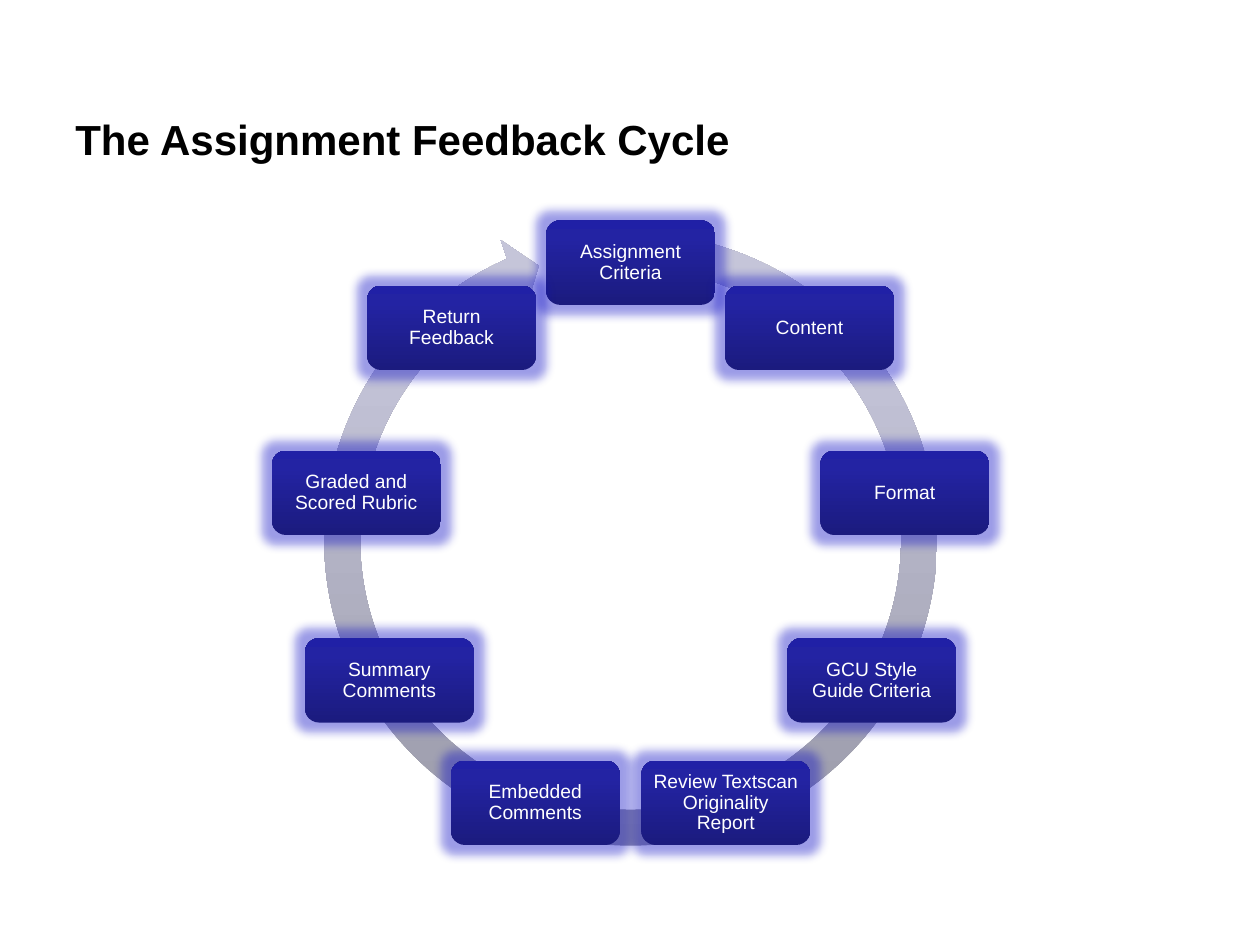
import copy
import math

from lxml import etree
from pptx import Presentation
from pptx.dml.color import RGBColor
from pptx.enum import shapes, text
from pptx.oxml import ns
from pptx.util import Inches, Pt

STEPS = [
    "Assignment Criteria", "Content", "Format", "GCU Style Guide Criteria",
    "Review Textscan Originality Report", "Embedded Comments",
    "Summary Comments", "Graded and Scored Rubric", "Return Feedback",
]
NAVY = ["1B1B7E", "2323A3", "2020A6"]
GREY = ["9898A7", "C5C5D9", "C6C6DA"]
GLOW = "0808C4"


def color(code):
    return RGBColor.from_string(code)


def style(font, size, code, bold=False):
    font.name, font.size, font.bold = "Arial", Pt(size), bold
    font.color.rgb = color(code)


def shade(shape, codes):
    """Fill from bottom to top with three stops, without line or shadow."""
    shape.shadow.inherit = False
    shape.line.fill.background()
    fill = shape.fill
    fill.gradient()
    fill.gradient_angle = 90
    last = shape.element.spPr.findall(".//" + ns.qn("a:gs"))[-1]
    last.addprevious(copy.deepcopy(last))
    for stop, place, code in zip(fill.gradient_stops, (0, 0.8, 1), codes):
        stop.position = place
        stop.color.rgb = color(code)


def add_glow(shape, code, size, alpha):
    effect = shape.element.spPr.find(ns.qn("a:effectLst"))
    glow = etree.SubElement(effect, ns.qn("a:glow"), rad=str(Pt(size)))
    tint = etree.SubElement(glow, ns.qn("a:srgbClr"), val=code)
    etree.SubElement(tint, ns.qn("a:alpha"), val=str(alpha * 1000))


def add_title(slide, words, x, y, w, h):
    box = slide.shapes.add_textbox(Inches(x), Inches(y), Inches(w), Inches(h))
    frame = box.text_frame
    frame.word_wrap = True
    frame.margin_top = Inches(0.4)
    frame.vertical_anchor = text.MSO_ANCHOR.MIDDLE
    frame.text = words
    style(frame.paragraphs[0].runs[0].font, 24, "000000", True)


def add_step(slide, words, x, y, w, h):
    card = slide.shapes.add_shape(
        shapes.MSO_SHAPE.ROUNDED_RECTANGLE,
        Inches(x), Inches(y), Inches(w), Inches(h))
    shade(card, NAVY)
    add_glow(card, GLOW, 11, 40)
    frame = card.text_frame
    frame.word_wrap = True
    frame.margin_left = frame.margin_right = Inches(0.05)
    frame.margin_top = frame.margin_bottom = Inches(0.05)
    frame.vertical_anchor = text.MSO_ANCHOR.MIDDLE
    frame.text = words
    para = frame.paragraphs[0]
    para.alignment = text.PP_ALIGN.CENTER
    para.line_spacing = 0.9
    style(para.runs[0].font, 11, "FFFFFF")


def add_cycle(slide, steps, x, y, w, h):
    # Ring arrow behind the steps
    side = 5.18
    ring = slide.shapes.add_shape(
        shapes.MSO_SHAPE.CIRCULAR_ARROW,
        Inches(x + (w - side) / 2), Inches(y - 0.06),
        Inches(side), Inches(side))
    for i, value in enumerate((0.055, 3.307, 147.542, 168.149, 0.058)):
        ring.adjustments[i] = value
    shade(ring, GREY)

    # Steps at equal angles, clockwise from the top
    wide, high, radius = 1.34, 0.67, 2.21
    mid_x, mid_y = x + w / 2, y + high / 2 + radius
    for i, words in enumerate(steps):
        turn = math.tau * i / len(steps)
        add_step(slide, words,
                 mid_x + radius * math.sin(turn) - wide / 2,
                 mid_y - radius * math.cos(turn) - high / 2,
                 wide, high)


def main():
    deck = Presentation()
    deck.slide_width, deck.slide_height = Inches(10), Inches(7.5)
    slide = deck.slides.add_slide(deck.slide_layouts[6])
    add_title(slide, "The Assignment Feedback Cycle", 0.5, 0.3, 9, 1.25)
    add_cycle(slide, STEPS, 2.16, 1.75, 5.69, 4.95)
    deck.save("out.pptx")


if __name__ == "__main__":
    main()
